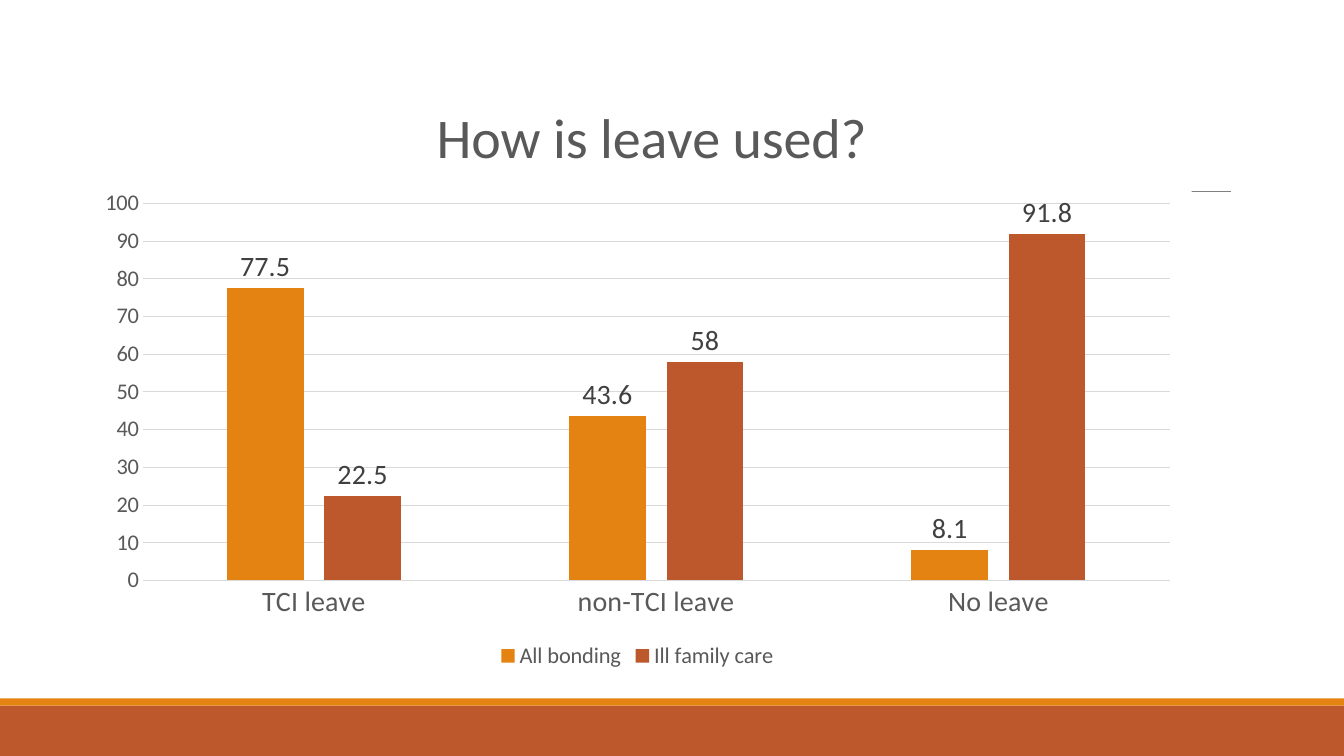
from dataclasses import dataclass

import lxml.etree
import pptx
import pptx.chart.data
import pptx.dml.color
import pptx.enum.chart
import pptx.enum.shapes
import pptx.oxml
import pptx.oxml.ns
import pptx.util

EMU_PER_PX = 9525
WIDTH, HEIGHT = 1280, 720
qn = pptx.oxml.ns.qn


@dataclass(frozen=True)
class Theme:
    font: str = "Calibri"
    orange: str = "E48312"
    rust: str = "BD582C"
    rule: str = "808080"
    grid: str = "D9D9D9"
    text: str = "595959"
    label: str = "404040"
    white: str = "FFFFFF"
    title_pt: int = 40
    large_pt: int = 20
    small_pt: int = 16


@dataclass(frozen=True)
class Band:
    top: int
    height: int
    color: str


@dataclass(frozen=True)
class Series:
    name: str
    values: tuple[float, ...]
    color: str


THEME = Theme()
BANDS = (Band(672, 48, THEME.rust), Band(665, 7, THEME.orange))
CATEGORIES = ("TCI leave", "non-TCI leave", "No leave")
SERIES = (
    Series("All bonding", (77.5, 43.6, 8.1), THEME.orange),
    Series("Ill family care", (22.5, 58, 91.8), THEME.rust),
)


def px(n: int) -> pptx.util.Emu:
    return pptx.util.Emu(n * EMU_PER_PX)


def rgb(color: str) -> pptx.dml.color.RGBColor:
    return pptx.dml.color.RGBColor.from_string(color)


def style_font(font, size: int, color: str) -> None:
    font.name = THEME.font
    font.size = pptx.util.Pt(size)
    font.bold = False
    font.color.rgb = rgb(color)


def style_line(line, color: str, width: float) -> None:
    line.color.rgb = rgb(color)
    line.width = pptx.util.Pt(width)


def add_band(slide, band: Band) -> None:
    sp = slide.shapes.add_shape(
        pptx.enum.shapes.MSO_SHAPE.RECTANGLE,
        px(0), px(band.top), px(WIDTH), px(band.height),
    )
    sp.shadow.inherit = False
    sp.fill.solid()
    sp.fill.fore_color.rgb = rgb(band.color)
    sp.line.fill.background()


def add_rule(slide, left: int, right: int, y: int) -> None:
    line = slide.shapes.add_connector(
        pptx.enum.shapes.MSO_CONNECTOR.STRAIGHT, px(left), px(y), px(right), px(y)
    )
    style_line(line.line, THEME.rule, 0.5)
    lxml.etree.SubElement(line._element.spPr, qn("a:effectLst"))


def set_layout(parent, index: int, **fractions: float) -> None:
    for old in parent.findall(qn("c:layout")):
        parent.remove(old)
    layout = lxml.etree.Element(qn("c:layout"))
    manual = lxml.etree.SubElement(layout, qn("c:manualLayout"))
    if "w" in fractions:
        lxml.etree.SubElement(manual, qn("c:layoutTarget"), val="inner")
    for axis in ("x", "y"):
        lxml.etree.SubElement(manual, qn(f"c:{axis}Mode"), val="edge")
    for key, value in fractions.items():
        lxml.etree.SubElement(manual, qn(f"c:{key}"), val=str(value))
    parent.insert(index, layout)


def fill_chart(chart, color: str) -> None:
    sp_pr = lxml.etree.Element(qn("c:spPr"))
    fill = lxml.etree.SubElement(sp_pr, qn("a:solidFill"))
    lxml.etree.SubElement(fill, qn("a:srgbClr"), val=color)
    line = lxml.etree.SubElement(sp_pr, qn("a:ln"))
    lxml.etree.SubElement(line, qn("a:noFill"))
    chart._chartSpace.find(qn("c:chart")).addnext(sp_pr)


def style_axes(chart) -> None:
    none = pptx.enum.chart.XL_TICK_MARK.NONE
    cat, val = chart.category_axis, chart.value_axis
    for axis, size in ((cat, THEME.large_pt), (val, THEME.small_pt)):
        axis.major_tick_mark = axis.minor_tick_mark = none
        style_font(axis.tick_labels.font, size, THEME.text)
    style_line(cat.format.line, THEME.grid, 0.75)
    val.format.line.fill.background()
    val.minimum_scale, val.maximum_scale, val.major_unit = 0, 100, 10
    val.has_major_gridlines = True
    style_line(val.major_gridlines.format.line, THEME.grid, 0.75)


def style_series(plot) -> None:
    plot.gap_width, plot.overlap = 219, -27
    plot.vary_by_categories = False
    for bars, series in zip(plot.series, SERIES):
        bars.format.fill.solid()
        bars.format.fill.fore_color.rgb = rgb(series.color)
        labels = bars.data_labels
        labels.show_value = True
        labels.position = pptx.enum.chart.XL_LABEL_POSITION.OUTSIDE_END
        style_font(labels.font, THEME.large_pt, THEME.label)


def add_leave_chart(slide) -> None:
    data = pptx.chart.data.CategoryChartData()
    data.categories = CATEGORIES
    for series in SERIES:
        data.add_series(series.name, series.values)
    chart = slide.shapes.add_chart(
        pptx.enum.chart.XL_CHART_TYPE.COLUMN_CLUSTERED,
        px(79), px(56), px(1056), px(586), data,
    ).chart
    style_font(chart.font, 10, "000000")
    fill_chart(chart, THEME.white)

    chart.has_title = True
    title = chart.chart_title
    tf = title.text_frame
    tf.text = "How is leave used?"
    style_font(tf.paragraphs[0].runs[0].font, THEME.title_pt, THEME.text)
    title.include_in_layout = False
    set_layout(title._element, 1, x=0.31, y=0.05)

    chart.has_legend = True
    chart.legend.position = pptx.enum.chart.XL_LEGEND_POSITION.BOTTOM
    chart.legend.include_in_layout = False
    style_font(chart.legend.font, THEME.small_pt, THEME.text)

    style_axes(chart)
    style_series(chart.plots[0])
    plot_area = chart._chartSpace.find(qn("c:chart")).find(qn("c:plotArea"))
    set_layout(plot_area, 0, x=0.054, y=0.235, w=0.926, h=0.613)


def main() -> None:
    prs = pptx.Presentation()
    prs.slide_width, prs.slide_height = px(WIDTH), px(HEIGHT)
    slide = prs.slides.add_slide(prs.slide_layouts[6])
    for band in BANDS:
        add_band(slide, band)
    add_rule(slide, 126, 1172, 182)
    add_leave_chart(slide)
    prs.save("out.pptx")


if __name__ == "__main__":
    main()
